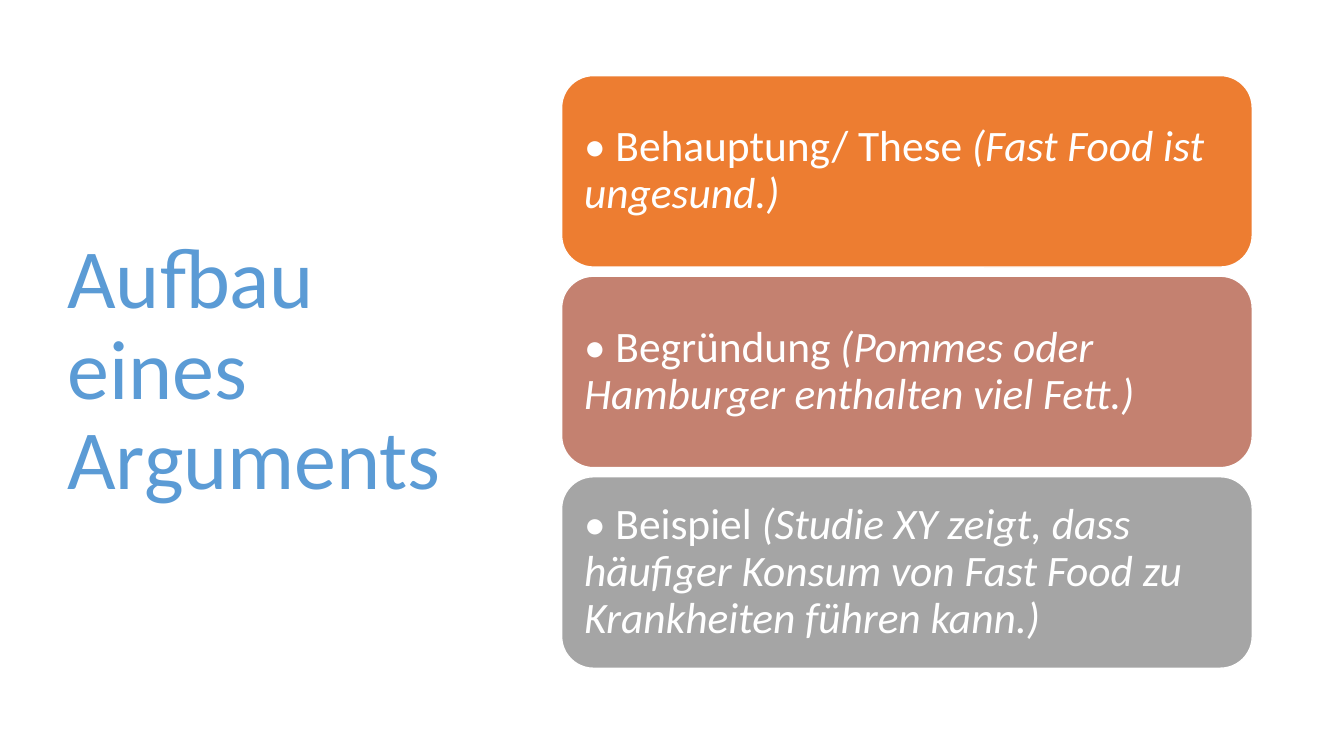
from pptx import Presentation
from pptx import util as u
from pptx.dml.color import RGBColor
from pptx.enum import shapes, text

PX = 9144  # EMU per px, 100 px to the inch
FONT = "Calibri"
COLORS = {
    "title": "5B9BD5",
    "claim": "ED7D31",
    "reason": "C48170",
    "example": "A5A5A5",
    "white": "FFFFFF",
}
STEPS = [
    ("claim", "• Behauptung/ These ", "(Fast Food ist ungesund.)"),
    ("reason", "• Begründung ", "(Pommes oder Hamburger enthalten viel Fett.)"),
    ("example", "• Beispiel ",
     "(Studie XY zeigt, dass häufiger Konsum von Fast Food zu Krankheiten führen kann.)"),
]


def px(*lengths):
    return [u.Emu(length * PX) for length in lengths]


def color(name):
    return RGBColor.from_string(COLORS[name])


def write(frame, runs, size, color_name, inset_x, inset_y):
    """Fill a frame with one left-aligned paragraph of (wording, italic) runs."""
    frame.word_wrap = True
    frame.vertical_anchor = text.MSO_ANCHOR.MIDDLE
    frame.margin_left, frame.margin_right = px(inset_x, inset_x)
    frame.margin_top, frame.margin_bottom = px(inset_y, inset_y)
    paragraph = frame.paragraphs[0]
    paragraph.alignment = text.PP_ALIGN.LEFT
    paragraph.line_spacing = 0.9
    for wording, italic in runs:
        run = paragraph.add_run()
        run.text = wording
        run.font.name = FONT
        run.font.size = u.Pt(size)
        run.font.italic = italic
        run.font.color.rgb = color(color_name)


def add_title(slide, left, top, width, height):
    title = slide.shapes.add_textbox(*px(left, top, width, height))
    write(title.text_frame, [("Aufbau eines Arguments", False)], 60, "title", 10, 5)


def add_steps(slide, left, top, width, height, gap):
    card_height = (height - gap * (len(STEPS) - 1)) // len(STEPS)
    for row, (fill, term, example) in enumerate(STEPS):
        card = slide.shapes.add_shape(
            shapes.MSO_SHAPE.ROUNDED_RECTANGLE,
            *px(left, top + row * (card_height + gap), width, card_height))
        card.shadow.inherit = False
        card.fill.solid()
        card.fill.fore_color.rgb = color(fill)
        card.line.color.rgb = color("white")
        card.line.width = u.Pt(1)
        write(card.text_frame, [(term, False), (example, True)], 31, "white", 13, 13)


def main():
    deck = Presentation()
    deck.slide_width, deck.slide_height = px(1333, 750)
    slide = deck.slides.add_slide(deck.slide_layouts[6])
    # Heading on the left
    add_title(slide, 57, 68, 416, 602)
    # Three parts of an argument on the right
    add_steps(slide, 557, 75, 685, 588, 9)
    deck.save("out.pptx")


if __name__ == "__main__":
    main()
